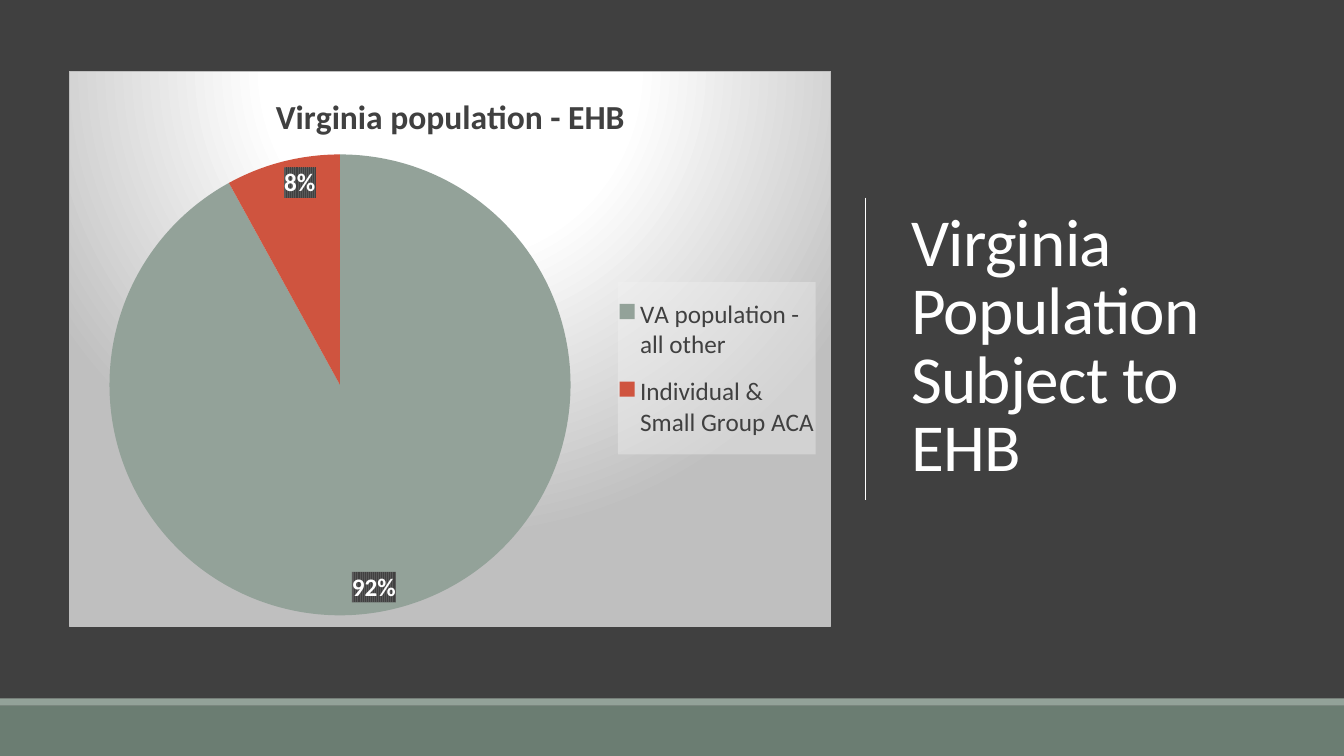
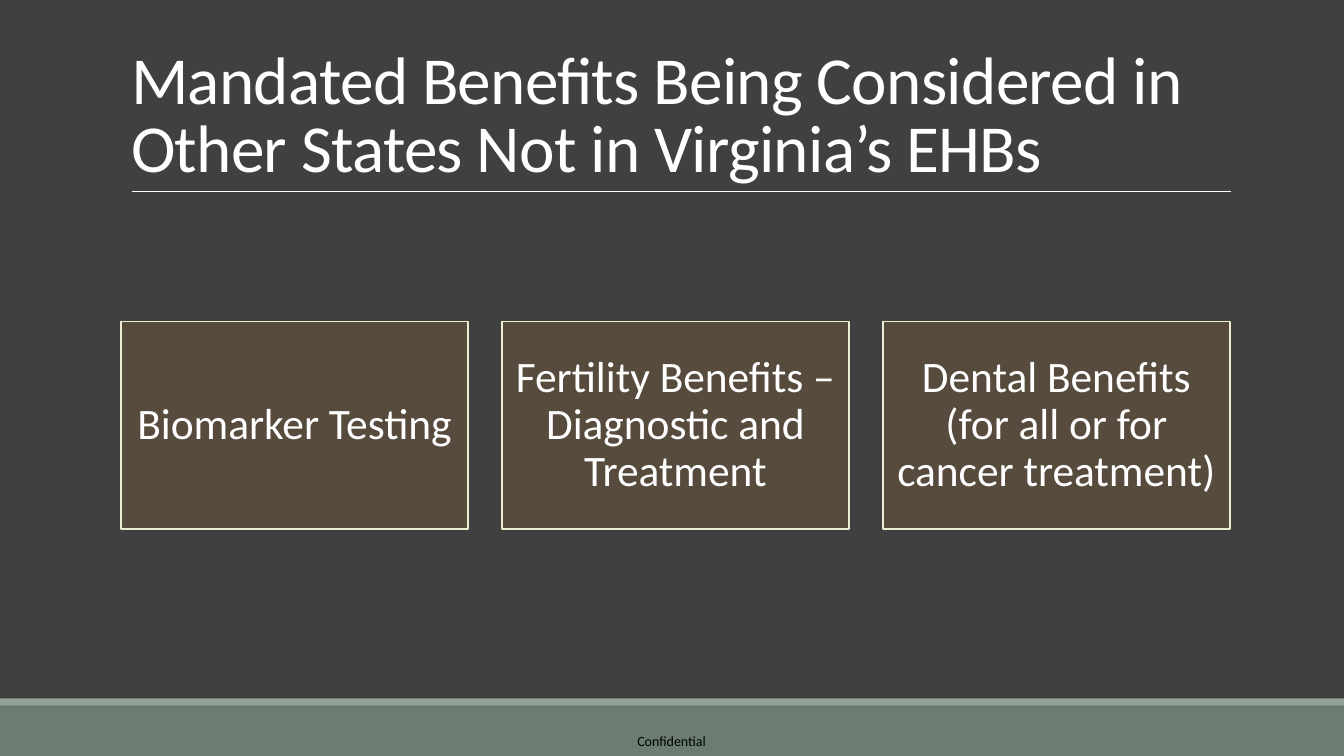
from pptx import Presentation
from pptx.chart.data import CategoryChartData
from pptx.dml.color import RGBColor
from pptx.enum.chart import XL_CHART_TYPE as Kind
from pptx.enum.chart import XL_LABEL_POSITION as Spot
from pptx.enum.chart import XL_LEGEND_POSITION as Side
from pptx.enum.shapes import MSO_CONNECTOR as Link
from pptx.enum.shapes import MSO_SHAPE as Shape
from pptx.enum.text import MSO_ANCHOR as Anchor
from pptx.enum.text import MSO_AUTO_SIZE as Fit
from pptx.enum.text import PP_ALIGN as Align
from pptx.oxml import parse_xml
from pptx.oxml.ns import nsdecls, qn
from pptx.util import Cm, Pt

FONT = "Calibri"
WIDE, HIGH = 33.87, 19.05
HUES = {
    "dark": "404040", "white": "FFFFFF", "black": "000000",
    "sage": "93A299", "moss": "6B7D72", "rust": "CF543F",
    "brown": "564B3C", "cream": "ECEDD1", "grey": "BFBFBF",
    "pale": "F2F2F2", "slate": "595959",
}


def hue(name):
    return RGBColor.from_string(HUES[name])


def put(item, **vals):
    for key, val in vals.items():
        setattr(item, key, val)


def style(font, size, tint, bold=False):
    put(font, name=FONT, size=Pt(size), bold=bold)
    font.color.rgb = hue(tint)


def paint(fill, tint):
    fill.solid()
    fill.fore_color.rgb = hue(tint)


def write(frame, text, size, tint, align, anchor, space=1, inset=None):
    put(frame, word_wrap=True, auto_size=Fit.NONE, vertical_anchor=anchor)
    if inset is not None:
        for side in ("left", "top", "right", "bottom"):
            setattr(frame, f"margin_{side}", Cm(inset))
    para = frame.paragraphs[0]
    put(para, alignment=align, line_spacing=space)
    run = para.add_run()
    run.text = text
    style(run.font, size, tint)


def block(slide, area, tint, edge=None):
    box = slide.shapes.add_shape(Shape.RECTANGLE, *map(Cm, area))
    box.shadow.inherit = False
    paint(box.fill, tint)
    if edge:
        box.line.color.rgb = hue(edge)
        box.line.width = Pt(1.25)
    else:
        box.line.fill.background()
    return box


def rule(slide, *ends):
    line = slide.shapes.add_connector(Link.STRAIGHT, *map(Cm, ends))
    line.line.color.rgb = hue("white")
    line.line.width = Pt(0.5)
    line.element.spPr.append(parse_xml(f'<a:effectLst {nsdecls("a")}/>'))


def start(deck, text, area, anchor):
    """Add a slide with the shared title style and bottom bands."""
    slide = deck.slides.add_slide(deck.slide_layouts[5])
    title = slide.shapes.title
    left, top, width, height = map(Cm, area)
    put(title, left=left, top=top, width=width, height=height)
    write(title.text_frame, text, 48, "white", Align.LEFT, anchor, 0.85)
    for props in title.element.iter(qn("a:rPr")):
        props.set("spc", "-50")
    block(slide, (0, 17.78, WIDE, HIGH - 17.78), "moss")
    block(slide, (0, 17.6, WIDE, 0.18), "sage")
    return slide


def look(inner):
    return parse_xml(f'<c:spPr {nsdecls("c", "a")}>{inner}</c:spPr>')


def tone(name, extra=""):
    return f'<a:srgbClr val="{HUES[name]}">{extra}</a:srgbClr>'


def place(near, x, y, w, h, inner=False):
    """Put a manual layout before the chart element near."""
    old = near.getparent().find(qn("c:layout"))
    if old is not None:
        old.getparent().remove(old)
    tags = '<c:layoutTarget val="inner"/>' if inner else ""
    tags += '<c:xMode val="edge"/><c:yMode val="edge"/>'
    for key, val in zip("xywh", (x, y, w, h)):
        tags += f'<c:{key} val="{val}"/>'
    near.addprevious(parse_xml(
        f'<c:layout {nsdecls("c")}><c:manualLayout>{tags}'
        '</c:manualLayout></c:layout>'))


def back(root):
    """Give the chart its round gradient and thin border."""
    stops = "".join(
        f'<a:gs pos="{at * 1000}">{tone(name)}</a:gs>'
        for at, name in ((0, "white"), (39, "white"), (100, "grey")))
    root.find(qn("c:chart")).addnext(look(
        f'<a:gradFill><a:gsLst>{stops}</a:gsLst><a:path path="circle">'
        '<a:fillToRect l="50000" t="-80000" r="50000" b="180000"/>'
        '</a:path></a:gradFill>'
        f'<a:ln w="9525"><a:solidFill>{tone("grey")}</a:solidFill></a:ln>'))


def pie(slide, area, head, parts):
    """Draw a pie from parts, a list of (label, value, colour)."""
    data = CategoryChartData()
    data.categories = [part[0] for part in parts]
    data.add_series("Series 1", [part[1] for part in parts])
    chart = slide.shapes.add_chart(Kind.PIE, *map(Cm, area), data).chart
    style(chart.font, 10, "white")
    root = chart.element
    back(root)

    chart.has_title = True
    title = chart.chart_title
    title.include_in_layout = False
    title.text_frame.text = head
    style(title.text_frame.paragraphs[0].runs[0].font, 24, "dark", True)

    plot = chart.plots[0]
    plot.vary_by_categories = True
    row = plot.series[0]
    for num, part in enumerate(parts):
        paint(row.points[num].format.fill, part[2])
    tags = row.data_labels
    put(tags, show_percentage=True, show_value=False, position=Spot.INSIDE_END,
        number_format="0%", number_format_is_linked=False)
    style(tags.font, 18, "white", True)
    node = next(root.iter(qn("c:dLbls")))
    node.find(qn("c:txPr")).addprevious(look(
        f'<a:pattFill prst="narVert"><a:fgClr>{tone("dark")}</a:fgClr>'
        f'<a:bgClr>{tone("slate")}</a:bgClr></a:pattFill>'))
    place(next(root.iter(qn("c:pieChart"))), 0.05, 0.15, 0.61, 0.83, True)

    chart.has_legend = True
    put(chart.legend, position=Side.RIGHT, include_in_layout=False)
    style(chart.legend.font, 18, "dark")
    node = next(root.iter(qn("c:legend")))
    place(node.find(qn("c:overlay")), 0.72, 0.38, 0.26, 0.31)
    clear = tone("pale", '<a:alpha val="39000"/>')
    node.find(qn("c:txPr")).addprevious(
        look(f"<a:solidFill>{clear}</a:solidFill>"))


def people(deck):
    slide = start(deck, "Virginia Population Subject to EHB",
                  (22.71, 1.75, 9.37, 14.05), Anchor.MIDDLE)
    rule(slide, 21.82, 4.98, 21.82, 12.6)
    pie(slide, (1.75, 1.78, 19.2, 14.02), "Virginia population - EHB", [
        ("VA population - all other", 92, "sage"),
        ("Individual & Small Group ACA", 8, "rust"),
    ])


def mandates(deck):
    slide = start(
        deck,
        "Mandated Benefits Being Considered in Other States "
        "Not in Virginia’s EHBs",
        (3.05, 0.79, 27.94, 4.04), Anchor.BOTTOM)
    rule(slide, 3.33, 4.83, 31.01, 4.83)
    note = slide.shapes.add_textbox(*map(Cm, (15.67, 18.31, 2.51, 0.74)))
    write(note.text_frame, "Confidential", 10, "black",
          Align.CENTER, Anchor.MIDDLE, inset=0)
    wide, gap = 8.74, 0.86
    for num, text in enumerate((
            "Biomarker Testing",
            "Fertility Benefits – Diagnostic and Treatment",
            "Dental Benefits (for all or for cancer treatment)")):
        left = 3.05 + num * (wide + gap)
        card = block(slide, (left, 8.1, wide, 5.23), "brown", "cream")
        write(card.text_frame, text, 31, "white",
              Align.CENTER, Anchor.MIDDLE, 0.9, 0.32)


def main():
    deck = Presentation()
    put(deck, slide_width=Cm(WIDE), slide_height=Cm(HIGH))
    paint(deck.slide_master.background.fill, "dark")
    people(deck)
    mandates(deck)
    deck.save("out.pptx")


if __name__ == "__main__":
    main()
